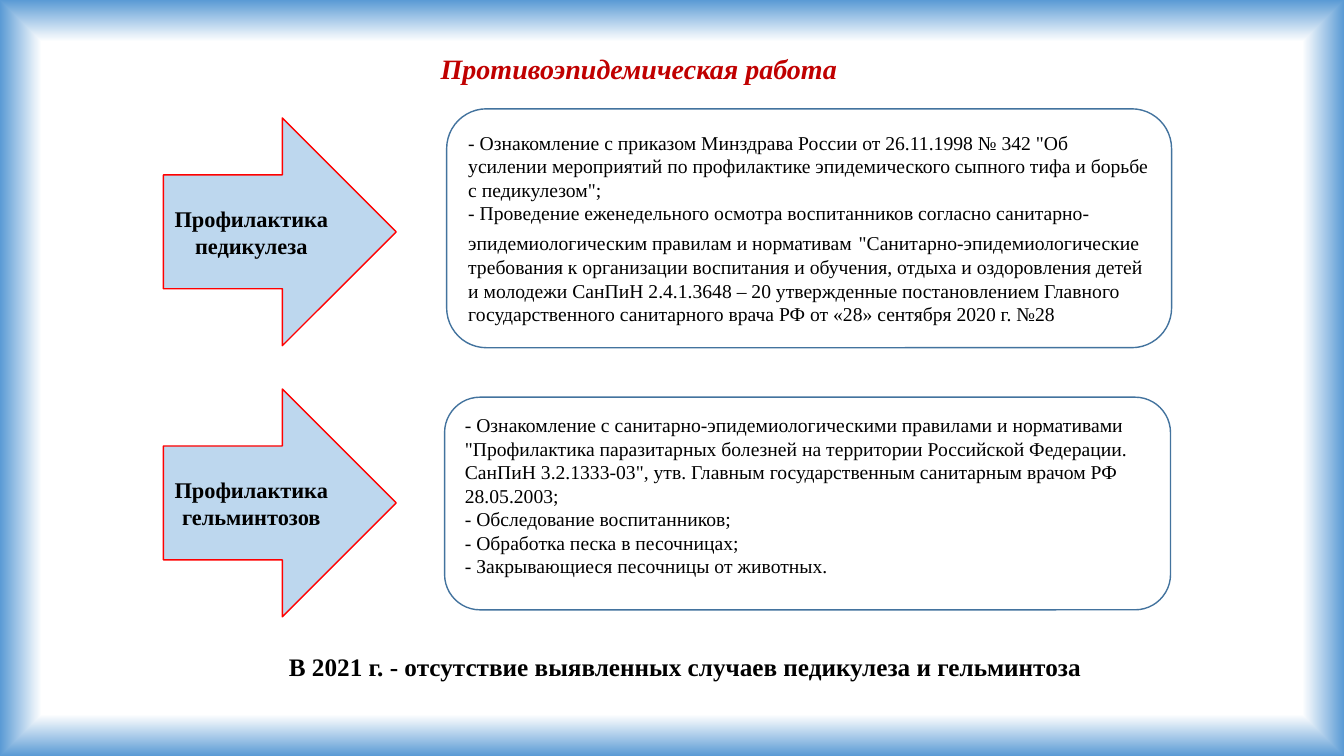
import pptx
import pptx.util
import pptx.dml.color
import pptx.enum.shapes
import pptx.enum.text
import pptx.oxml
import pptx.oxml.ns

Inches = pptx.util.Inches
SHAPES = pptx.enum.shapes.MSO_SHAPE
ALIGN = pptx.enum.text.PP_ALIGN
ANCHOR = pptx.enum.text.MSO_ANCHOR
AUTOSIZE = pptx.enum.text.MSO_AUTO_SIZE


def color(value):
    return pptx.dml.color.RGBColor.from_string(value)


def write(frame, text, size=14, ink="000000", bold=False, italic=False,
          align=ALIGN.LEFT, anchor=ANCHOR.MIDDLE, wrap=True, fit=AUTOSIZE.NONE):
    frame.word_wrap = wrap
    frame.auto_size = fit
    frame.vertical_anchor = anchor
    frame.text = text
    for paragraph in frame.paragraphs:
        paragraph.alignment = align
        for run in paragraph.runs:
            run.font.name = "Times New Roman"
            run.font.size = pptx.util.Pt(size)
            run.font.color.rgb = color(ink)
            run.font.bold = bold
            run.font.italic = italic


deck = pptx.Presentation()
deck.slide_width, deck.slide_height = Inches(13.33), Inches(7.5)
slide = deck.slides.add_slide(deck.slide_layouts[5])

slide.background.fill.gradient()
gradient = slide.element.find(".//" + pptx.oxml.ns.qn("a:gradFill"))
stops = "".join(
    f'<a:gs pos="{percent * 1000}"><a:srgbClr val="{tint}"/></a:gs>'
    for percent, tint in [(0, "FFFFFF"), (89, "FFFFFF"), (100, "5B9BD5")]
)
gradient.getparent().replace(gradient, pptx.oxml.parse_xml(
    f'<a:gradFill {pptx.oxml.ns.nsdecls("a")} rotWithShape="1"><a:gsLst>{stops}</a:gsLst>'
    '<a:path path="shape"><a:fillToRect l="50000" t="50000" r="50000" b="50000"/></a:path>'
    '</a:gradFill>'
))

title = slide.shapes.title
title.left, title.top = Inches(4.27), Inches(0.46)
title.width, title.height = Inches(4.16), Inches(0.44)
write(title.text_frame, "Противоэпидемическая работа", size=20, ink="C00000", bold=True,
      italic=True, anchor=ANCHOR.TOP, wrap=False, fit=AUTOSIZE.SHAPE_TO_FIT_TEXT)

lice_measures = (
    '- Ознакомление с приказом Минздрава России от 26.11.1998 № 342 "Об усилении мероприятий '
    'по профилактике эпидемического сыпного тифа и борьбе с педикулезом";\n'
    '- Проведение еженедельного осмотра воспитанников согласно '
    'санитарно-эпидемиологическим правилам и нормативам'
)
lice_rules = (
    '"Санитарно-эпидемиологические требования к организации воспитания и обучения, отдыха и '
    'оздоровления детей и молодежи СанПиН 2.4.1.3648 – 20 утвержденные постановлением Главного '
    'государственного санитарного врача РФ от «28» сентября 2020 г. №28'
)
worm_measures = (
    '- Ознакомление с санитарно-эпидемиологическими правилами и нормативами "Профилактика '
    'паразитарных болезней на территории Российской Федерации. СанПиН 3.2.1333-03", утв. '
    'Главным государственным санитарным врачом РФ 28.05.2003;\n'
    '- Обследование воспитанников;\n'
    '- Обработка песка в песочницах;\n'
    '- Закрывающиеся песочницы от животных.'
)

outlined = [
    (SHAPES.RIGHT_ARROW, (1.62, 1.17, 2.31, 2.26), "BDD7EE", "FF0000",
     "Профилактика педикулеза", dict(size=16, bold=True, align=ALIGN.CENTER)),
    (SHAPES.RIGHT_ARROW, (1.62, 3.86, 2.31, 2.26), "BDD7EE", "FF0000",
     "Профилактика гельминтозов", dict(size=16, bold=True, align=ALIGN.CENTER)),
    (SHAPES.ROUNDED_RECTANGLE, (4.43, 1.08, 7.19, 2.37), "FFFFFF", "43739E", lice_measures, {}),
    (SHAPES.ROUNDED_RECTANGLE, (4.41, 3.94, 7.2, 2.11), "FFFFFF", "43739E", worm_measures, {}),
]
frames = []
for outline, place, fill, border, text, style in outlined:
    block = slide.shapes.add_shape(outline, *map(Inches, place))
    block.shadow.inherit = False
    block.fill.solid()
    block.fill.fore_color.rgb = color(fill)
    block.line.color.rgb = color(border)
    block.line.width = pptx.util.Pt(1)
    write(block.text_frame, text, **style)
    frames.append(block.text_frame)

lice_frame, worm_frame = frames[2:]
for text, size in [(" ", 18), (lice_rules, 14)]:
    run = lice_frame.paragraphs[-1].add_run()
    run.text = text
    run.font.name = "Times New Roman"
    run.font.size = pptx.util.Pt(size)
    run.font.color.rgb = color("000000")
worm_frame.margin_bottom = Inches(0.21)

conclusion = slide.shapes.add_textbox(*map(Inches, (2.6, 6.41, 8.39, 0.4)))
write(conclusion.text_frame, "В 2021 г. - отсутствие выявленных случаев педикулеза и гельминтоза",
      size=18, bold=True, align=ALIGN.CENTER, anchor=ANCHOR.TOP,
      fit=AUTOSIZE.SHAPE_TO_FIT_TEXT)

deck.save("out.pptx")
